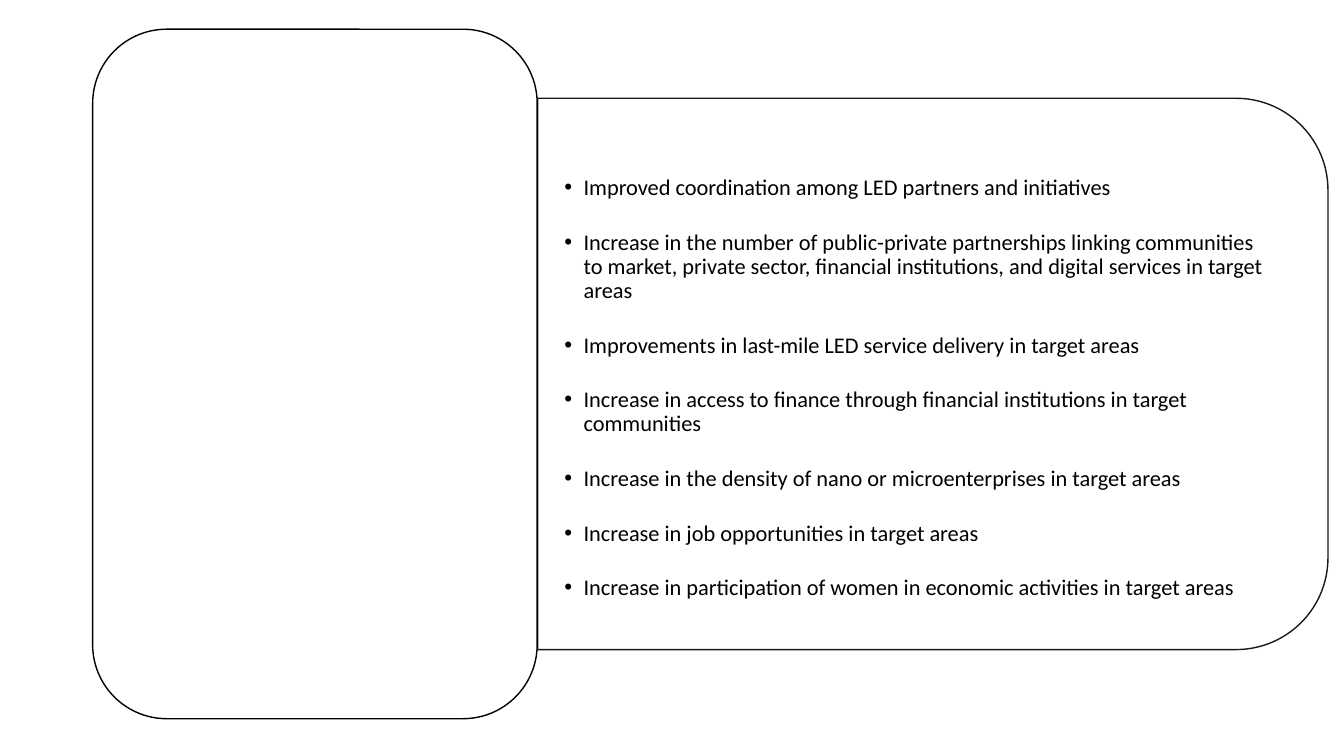
import pptx
import pptx.util
import pptx.dml.color
import pptx.enum.shapes
import pptx.enum.text
import pptx.oxml.ns
import pptx.oxml.xmlchemy
from dataclasses import dataclass

Pt = pptx.util.Pt
RGB = pptx.dml.color.RGBColor
SHAPE = pptx.enum.shapes.MSO_SHAPE

OUTCOMES = [
    "Improved coordination among LED partners and initiatives",
    "Increase in the number of public-private partnerships linking communities "
    "to market, private sector, financial institutions, and digital services in target areas",
    "Improvements in last-mile LED service delivery in target areas",
    "Increase in access to finance through financial institutions in target communities",
    "Increase in the density of nano or microenterprises in target areas",
    "Increase in job opportunities in target areas",
    "Increase in participation of women in economic activities in target areas",
]


@dataclass(frozen=True)
class Theme:
    font: str = "Calibri"
    body_size: float = 16
    text: RGB = RGB(0, 0, 0)
    line: RGB = RGB(0, 0, 0)
    panel: RGB = RGB(255, 255, 255)
    line_width: float = 1
    line_spacing: float = 0.9
    item_gap: float = 21.7
    indent: float = 13.7


def element(tag, name, value):
    node = pptx.oxml.xmlchemy.OxmlElement(tag)
    node.set(name, str(value))
    return node


class SlideBuilder:
    def __init__(self, prs, theme):
        self.theme = theme
        self.slide = prs.slides.add_slide(prs.slide_layouts[1])
        title = self.slide.shapes.title.element
        title.getparent().remove(title)

    def panel(self, kind, left, top, width, height, rotation=0, alpha=100):
        sp = self.slide.shapes.add_shape(kind, Pt(left), Pt(top), Pt(width), Pt(height))
        sp.rotation = rotation
        sp.shadow.inherit = False
        sp.fill.solid()
        sp.fill.fore_color.rgb = self.theme.panel
        sp.line.color.rgb = self.theme.line
        sp.line.width = Pt(self.theme.line_width)
        if alpha < 100:
            for color in sp.element.spPr.iter(pptx.oxml.ns.qn("a:srgbClr")):
                color.append(element("a:alpha", "val", alpha * 1000))

    def bullets(self, items, left, top, width, height, insets):
        sp = self.slide.placeholders[1]
        sp.left, sp.top, sp.width, sp.height = Pt(left), Pt(top), Pt(width), Pt(height)
        self.slide.shapes.element.append(sp.element)
        tf = sp.text_frame
        tf.word_wrap = True
        tf.auto_size = pptx.enum.text.MSO_AUTO_SIZE.NONE
        tf.vertical_anchor = pptx.enum.text.MSO_ANCHOR.MIDDLE
        tf.margin_left, tf.margin_top, tf.margin_right, tf.margin_bottom = map(Pt, insets)
        tf.text = "\n".join(items)
        for p in tf.paragraphs:
            p.font.name = self.theme.font
            p.font.size = Pt(self.theme.body_size)
            p.font.color.rgb = self.theme.text
            p.line_spacing = self.theme.line_spacing
            p.space_before = Pt(0)
            p.space_after = Pt(self.theme.item_gap)
            pPr = p._p.get_or_add_pPr()
            pPr.set("marL", str(Pt(self.theme.indent)))
            pPr.set("indent", str(-Pt(self.theme.indent)))
            bullet = element("a:buChar", "char", "•")
            pPr.insert_element_before(bullet, "a:tabLst", "a:defRPr", "a:extLst")
        tf.paragraphs[-1].space_after = Pt(0)


def main():
    prs = pptx.Presentation()
    prs.slide_width, prs.slide_height = Pt(960), Pt(540)
    s = SlideBuilder(prs, Theme())
    s.panel(SHAPE.ROUND_2_SAME_RECTANGLE, 469.4, -15.1, 393.8, 564.5, rotation=90, alpha=90)
    s.panel(SHAPE.ROUNDED_RECTANGLE, 66.2, 20.9, 317.5, 492.5)
    s.bullets(OUTCOMES, 383.8, 89.3, 545.8, 355.7, insets=(19.4, 30.7, 19.4, 10))
    prs.save("out.pptx")


if __name__ == "__main__":
    main()
